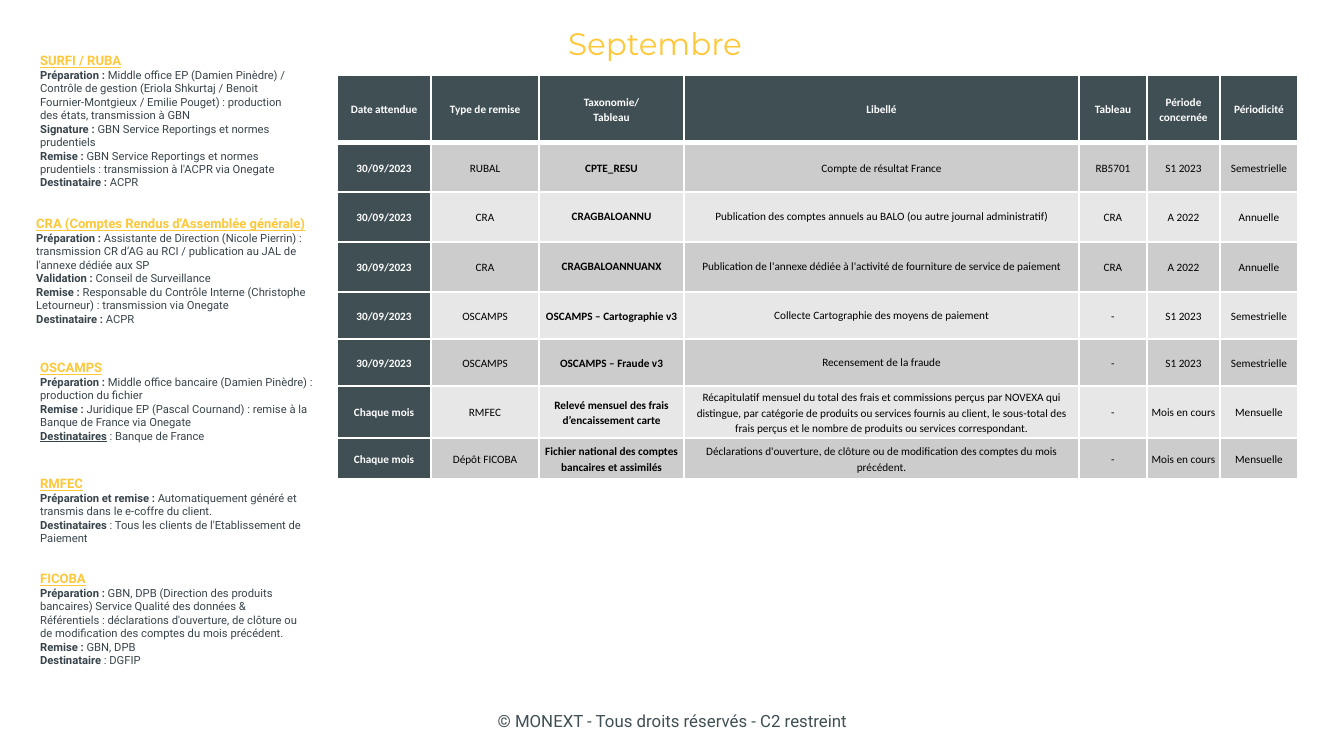
from pptx import Presentation
from pptx.dml.color import RGBColor
from pptx.enum.text import MSO_ANCHOR as Anchor, PP_ALIGN as Align
from pptx.oxml.ns import qn
from pptx.util import Emu, Pt
from lxml.etree import SubElement

SCALE = 914400 / 134.4
YELLOW, SLATE, INK = "FFC83A", "404F54", "38444B"
WHITE, BLACK, BANDS = "FFFFFF", "000000", ("CCCCCC", "E7E7E7")


def px(n):
    return Emu(round(n * SCALE))


def rgb(value):
    return RGBColor.from_string(value)


class Deck:
    body_font = "Roboto"
    title_font = "Montserrat"
    table_font = "Calibri"

    def __init__(self, width, height):
        self.prs = Presentation()
        self.prs.slide_width, self.prs.slide_height = px(width), px(height)
        self.s = self.prs.slides.add_slide(self.prs.slide_layouts[6])

    def run(self, p, text, size, color, font=None, bold=False, underline=False):
        r = p.add_run()
        r.text = text
        f = r.font
        f.size, f.name, f.bold = Pt(size), font or self.body_font, bold
        f.underline = underline
        f.color.rgb = rgb(color)

    def frame(self, x, y, w, h):
        tf = self.s.shapes.add_textbox(px(x), px(y), px(w), px(h)).text_frame
        tf.word_wrap = True
        return tf

    def line(self, x, y, w, h, text, size, color, font):
        tf = self.frame(x, y, w, h)
        tf.vertical_anchor = Anchor.MIDDLE
        p = tf.paragraphs[0]
        p.alignment = Align.CENTER
        self.run(p, text, size, color, font)

    def note(self, x, y, w, h, heading, items):
        tf = self.frame(x, y, w, h)
        self.run(tf.paragraphs[0], heading, 7, YELLOW, bold=True, underline=True)
        for label, text, *underline in items:
            p = tf.add_paragraph()
            self.run(p, label, 6, INK, bold=True, underline=bool(underline))
            self.run(p, text, 6, INK)

    def border(self, cell, side, width):
        ln = SubElement(cell._tc.get_or_add_tcPr(), qn(f"a:ln{side}"), w=str(Pt(width)))
        fill = SubElement(ln, qn("a:solidFill"))
        SubElement(fill, qn("a:srgbClr"), val=WHITE)

    def cell(self, cell, text, fill, color, bold, tight, header, below_header):
        for side in "LRTB":
            thick = (header and side == "B") or (below_header and side == "T")
            self.border(cell, side, 3 if thick else 1)
        cell.fill.solid()
        cell.fill.fore_color.rgb = rgb(fill)
        cell.vertical_anchor = Anchor.MIDDLE
        cell.margin_left = cell.margin_right = px(0 if tight else 4)
        cell.margin_top = cell.margin_bottom = px(0 if tight else 3)
        tf = cell.text_frame
        for i, part in enumerate(text.split("\n")):
            p = tf.add_paragraph() if i else tf.paragraphs[0]
            p.alignment = Align.CENTER
            p.line_spacing = 1.0 if tight else 1.15
            self.run(p, part, 6, color, self.table_font, bold)

    def table(self, x, y, cols, heights, rows, tight):
        table = self.s.shapes.add_table(
            len(rows), len(cols), px(x), px(y), px(sum(cols)), px(sum(heights))).table
        for col, w in zip(table.columns, cols):
            col.width = px(w)
        for row, h in zip(table.rows, heights):
            row.height = px(h)
        for i, row in enumerate(rows):
            for j, text in enumerate(row):
                dark = i == 0 or j == 0
                self.cell(table.cell(i, j), text,
                          SLATE if dark else BANDS[(i - 1) % 2],
                          WHITE if dark else BLACK,
                          dark or j == 2, (i, j) in tight, i == 0, i == 1)


COLS = [94, 108, 145, 395, 68, 73, 78]
HEIGHTS = [68, 49, 50, 50, 47, 47, 52, 41]
TIGHT = {(2, 2), (2, 3), (3, 2), (3, 3), (4, 3), (5, 3)}
DAY, MONTH = "30/09/2023", "Chaque mois"
ROWS = [
    ("Date attendue", "Type de remise", "Taxonomie/\nTableau", "Libellé",
     "Tableau", "Période concernée", "Périodicité"),
    (DAY, "RUBAL", "CPTE_RESU", "Compte de résultat France",
     "RB5701", "S1 2023", "Semestrielle"),
    (DAY, "CRA", "CRAGBALOANNU",
     "Publication des comptes annuels au BALO (ou autre journal administratif)",
     "CRA", "A 2022", "Annuelle"),
    (DAY, "CRA", "CRAGBALOANNUANX",
     "Publication de l'annexe dédiée à l'activité de fourniture de service de paiement",
     "CRA", "A 2022", "Annuelle"),
    (DAY, "OSCAMPS", "OSCAMPS – Cartographie v3",
     "Collecte Cartographie des moyens de paiement", "-", "S1 2023", "Semestrielle"),
    (DAY, "OSCAMPS", "OSCAMPS – Fraude v3", "Recensement de la fraude",
     "-", "S1 2023", "Semestrielle"),
    (MONTH, "RMFEC", "Relevé mensuel des frais d’encaissement carte",
     "Récapitulatif mensuel du total des frais et commissions perçus par NOVEXA qui "
     "distingue, par catégorie de produits ou services fournis au client, le sous-total "
     "des frais perçus et le nombre de produits ou services correspondant.",
     "-", "Mois en cours", "Mensuelle"),
    (MONTH, "Dépôt FICOBA", "Fichier national des comptes bancaires et assimilés",
     "Déclarations d'ouverture, de clôture ou de modification des comptes du mois précédent.",
     "-", "Mois en cours", "Mensuelle"),
]
NOTES = [
    (27, 46, 276, 149, "SURFI / RUBA", [
        ("Préparation : ", "Middle office EP (Damien Pinèdre) / Contrôle de gestion "
         "(Eriola Shkurtaj / Benoit Fournier-Montgieux / Emilie Pouget) : production "
         "des états, transmission à GBN"),
        ("Signature : ", "GBN Service Reportings et normes prudentiels"),
        ("Remise : ", "GBN Service Reportings et normes prudentiels : "
         "transmission à l'ACPR via Onegate"),
        ("Destinataire : ", "ACPR")]),
    (23, 209, 310, 157, "CRA (Comptes Rendus d'Assemblée générale)", [
        ("Préparation : ", "Assistante de Direction (Nicole Pierrin) : transmission CR "
         "d’AG au RCI / publication au JAL de l'annexe dédiée aux SP"),
        ("Validation : ", "Conseil de Surveillance"),
        ("Remise : ", "Responsable du Contrôle Interne (Christophe Letourneur) : "
         "transmission via Onegate"),
        ("Destinataire :", " ACPR")]),
    (27, 353, 304, 99, "OSCAMPS", [
        ("Préparation : ", "Middle office bancaire (Damien Pinèdre) : "
         "production du fichier"),
        ("Remise : ", "Juridique EP (Pascal Cournand) : remise à la Banque de France "
         "via Onegate"),
        ("Destinataires", " : Banque de France", True)]),
    (27, 469, 304, 86, "RMFEC", [
        ("Préparation et remise : ", "Automatiquement généré et transmis dans le "
         "e-coffre du client."),
        ("Destinataires", " : Tous les clients de l'Etablissement de Paiement")]),
    (27, 564, 294, 124, "FICOBA", [
        ("Préparation :", " GBN, DPB (Direction des produits bancaires) Service Qualité "
         "des données & Référentiels : déclarations d'ouverture, de clôture ou de "
         "modification des comptes du mois précédent."),
        ("Remise : ", "GBN, DPB"),
        ("Destinataire", " : DGFIP")]),
]


def main():
    deck = Deck(1344, 756)
    deck.line(459, 701, 426, 40, "© MONEXT - Tous droits réservés - C2 restreint",
              9, SLATE, deck.body_font)
    deck.line(282, 19, 746, 48, "Septembre", 16.6, YELLOW, deck.title_font)
    deck.table(337, 75, COLS, HEIGHTS, ROWS, TIGHT)
    for note in NOTES:
        deck.note(*note)
    deck.prs.save("out.pptx")


if __name__ == "__main__":
    main()
